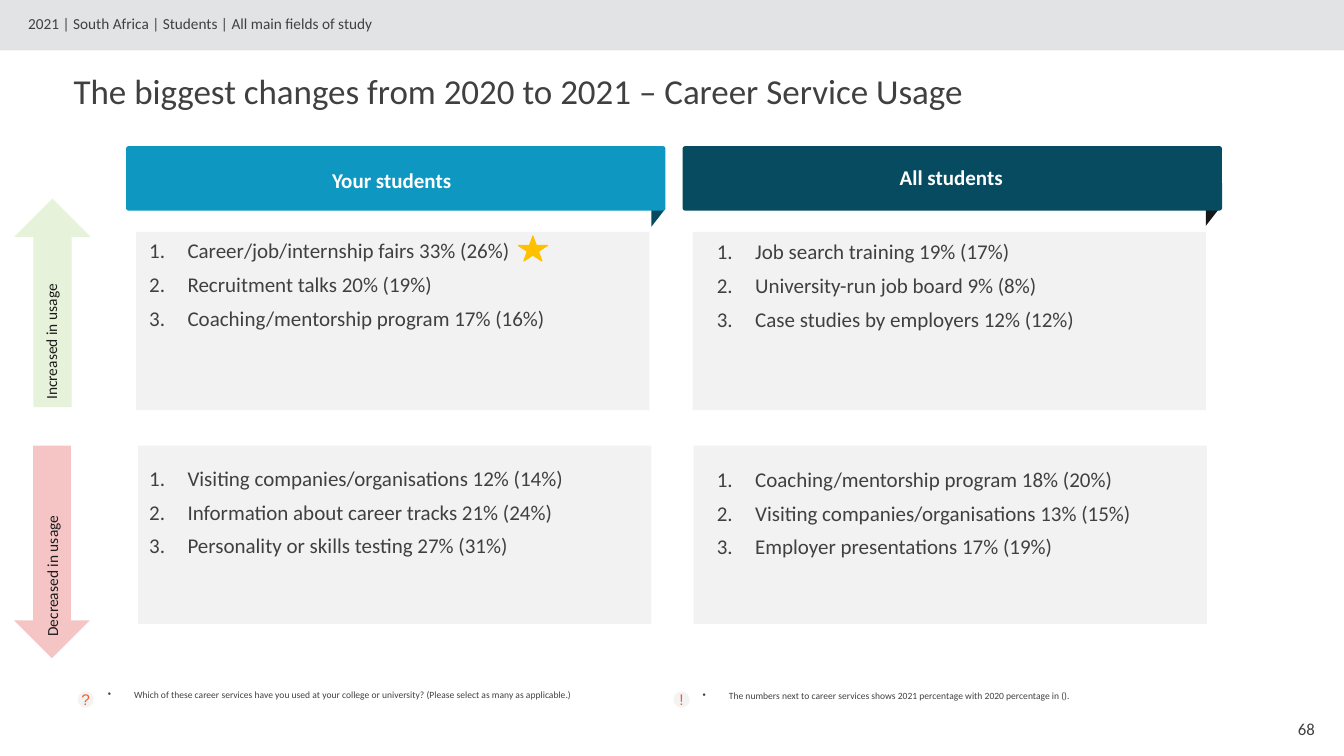
from lxml import etree
from pptx import Presentation
from pptx.dml.color import RGBColor
from pptx.enum.shapes import MSO_SHAPE
from pptx.enum.text import MSO_ANCHOR, MSO_AUTO_SIZE, PP_ALIGN
from pptx.oxml.ns import qn
from pptx.util import Inches, Pt

RECT = MSO_SHAPE.RECTANGLE
ROUNDED = MSO_SHAPE.ROUNDED_RECTANGLE
TRIANGLE = MSO_SHAPE.RIGHT_TRIANGLE
ARROW = MSO_SHAPE.DOWN_ARROW
CIRCLE = MSO_SHAPE.FLOWCHART_CONNECTOR
STAR = MSO_SHAPE.STAR_5_POINT
LEFT, CENTER, RIGHT = PP_ALIGN.LEFT, PP_ALIGN.CENTER, PP_ALIGN.RIGHT
TOP, MIDDLE = MSO_ANCHOR.TOP, MSO_ANCHOR.MIDDLE
COMPARISON_LAYOUT = 4

COLORS = {
    "text": "414041", "label": "1D1C1D", "white": "FFFFFF",
    "band": "E2E3E4", "panel": "F2F2F2", "icon": "F3F3F3", "accent": "F1612A",
    "blue": "0E97C1", "teal": "074B60", "black": "161718",
    "up": "E7F2DA", "down": "F5C5C6", "star": "FFC000",
}

HEADERS = [
    # text, bar left, text position, fill, fold position, fold fill
    ("Your students", 1.25, (1.21, 1.61), "blue", (6.44, 2.09), "teal"),
    ("All students", 6.77, (6.76, 1.58), "teal", (11.94, 2.08), "black"),
]
LISTS = [
    # panel position, text position, items
    ((1.35, 2.3), (1.38, 2.31), ["Career/job/internship fairs 33% (26%)",
                                 "Recruitment talks 20% (19%)",
                                 "Coaching/mentorship program 17% (16%)"]),
    ((6.87, 2.3), (7.01, 2.32), ["Job search training 19% (17%)",
                                 "University-run job board 9% (8%)",
                                 "Case studies by employers 12% (12%)"]),
    ((1.37, 4.42), (1.38, 4.57), ["Visiting companies/organisations 12% (14%)",
                                  "Information about career tracks 21% (24%)",
                                  "Personality or skills testing 27% (31%)"]),
    ((6.88, 4.42), (7.01, 4.58), ["Coaching/mentorship program 18% (20%)",
                                  "Visiting companies/organisations 13% (15%)",
                                  "Employer presentations 17% (19%)"]),
]
TRENDS = [
    # text, text position, arrow frame, arrow rotation, fill
    ("Increased in usage", (-0.6, 2.9), (0.14, 1.97, 0.76, 2.07), 180, "up"),
    ("Decreased in usage", (-0.59, 5.25), (0.14, 4.42, 0.75, 2.11), 0, "down"),
]
NOTES = [
    # icon, icon left, text frame, text
    ("?", 0.77, (0.96, 6.79, 5.51, 0.22),
     "Which of these career services have you used at your college or "
     "university? (Please select as many as applicable.)"),
    ("!", 6.68, (6.86, 6.8, 5.81, 0.22),
     "The numbers next to career services shows 2021 percentage with 2020 "
     "percentage in ()."),
]


class SlideBuilder:
    def __init__(self, page):
        self.page = page
        self.font = "Calibri"

    def shape(self, kind, frame, fill, rotation=0):
        shape = self.page.shapes.add_shape(kind, *map(Inches, frame))
        shape.shadow.inherit = False
        shape.fill.solid()
        shape.fill.fore_color.rgb = RGBColor.from_string(COLORS[fill])
        shape.line.fill.background()
        shape.rotation = rotation
        return shape

    def set_text(self, box, lines, size, color="text", align=LEFT, anchor=TOP,
                 bold=False, font=None, bullet=None, indent=0, after=0, inset=0.1):
        """Fill a shape's text frame; bullet is a (tag, attribute, value) triple."""
        frame = box.text_frame
        frame.auto_size = MSO_AUTO_SIZE.NONE
        frame.word_wrap = True
        frame.vertical_anchor = anchor
        frame.margin_left = frame.margin_right = Inches(inset)
        frame.margin_top = frame.margin_bottom = Inches(0.05)
        for number, line in enumerate(lines):
            para = frame.add_paragraph() if number else frame.paragraphs[0]
            para.alignment = align
            para.space_before, para.space_after = Pt(0), Pt(after)
            if bullet:
                tag, attribute, value = bullet
                properties = para._p.get_or_add_pPr()
                properties.set("marL", str(Inches(indent)))
                properties.set("indent", str(-Inches(indent)))
                etree.SubElement(properties, qn(tag)).set(attribute, value)
            span = para.add_run()
            span.text = line
            span.font.name = font or self.font
            span.font.size = Pt(size)
            span.font.bold = bold
            span.font.color.rgb = RGBColor.from_string(COLORS[color])

    def text(self, frame, line, size, rotation=0, **style):
        box = self.page.shapes.add_textbox(*map(Inches, frame))
        box.rotation = rotation
        self.set_text(box, [line], size, **style)

    def placeholder(self, holder, frame, lines, size, **style):
        """Move a template placeholder to the front and fill it."""
        holder.element.getparent().append(holder.element)
        holder.left, holder.top, holder.width, holder.height = map(Inches, frame)
        self.set_text(holder, lines, size, **style)


def main():
    deck = Presentation()
    deck.slide_width, deck.slide_height = Inches(13.33), Inches(7.5)
    page = deck.slides.add_slide(deck.slide_layouts[COMPARISON_LAYOUT])
    title, *bodies = page.placeholders
    build = SlideBuilder(page)

    build.shape(RECT, (0, 0, 13.33, 0.5), "band")
    build.text((0.17, 0.09, 11.36, 0.31),
               "2021 | South Africa | Students | All main fields of study",
               10.9, inset=0.11)
    build.placeholder(title, (0.62, 0.64, 12.55, 0.62),
                      ["The biggest changes from 2020 to 2021 – Career Service Usage"],
                      25, inset=0.11)

    for label, left, position, fill, fold, fold_fill in HEADERS:
        build.shape(TRIANGLE, (*fold, 0.18, 0.14), fold_fill, rotation=90)
        bar = build.shape(ROUNDED, (left, 1.45, 5.35, 0.64), fill)
        bar.adjustments[0] = 0.04
        build.text((*position, 5.35, 0.35), label, 15,
                   color="white", align=CENTER, bold=True)

    for body, (panel, position, items) in zip(bodies, LISTS):
        build.shape(RECT, (*panel, 5.09, 1.77), "panel")
        build.placeholder(body, (*position, 5.06, 1.03), items, 15,
                          bullet=("a:buAutoNum", "type", "arabicPeriod"),
                          indent=0.38, after=6)

    for label, position, arrow, rotation, fill in TRENDS:
        build.shape(ARROW, arrow, fill, rotation)
        build.text((*position, 2.21, 0.14), label, 11, rotation=270,
                   color="label", anchor=MIDDLE, inset=0.11)

    star = build.shape(STAR, (5.14, 2.34, 0.29, 0.25), "star")
    star.line.color.rgb = RGBColor.from_string(COLORS["star"])
    star.line.width = Pt(0.75)

    for symbol, left, frame, note in NOTES:
        icon = build.shape(CIRCLE, (left, 6.86, 0.16, 0.16), "icon")
        build.set_text(icon, [symbol], 11, color="accent", align=CENTER,
                       anchor=MIDDLE, font="Arial", inset=0.11)
        icon.text_frame.word_wrap = False
        build.text(frame, note, 6.8, bullet=("a:buChar", "char", "•"),
                   indent=0.26, inset=0.11)

    build.text((12.16, 7.03, 0.98, 0.4), "68", 12, align=RIGHT, anchor=MIDDLE)
    deck.save("out.pptx")


if __name__ == "__main__":
    main()
